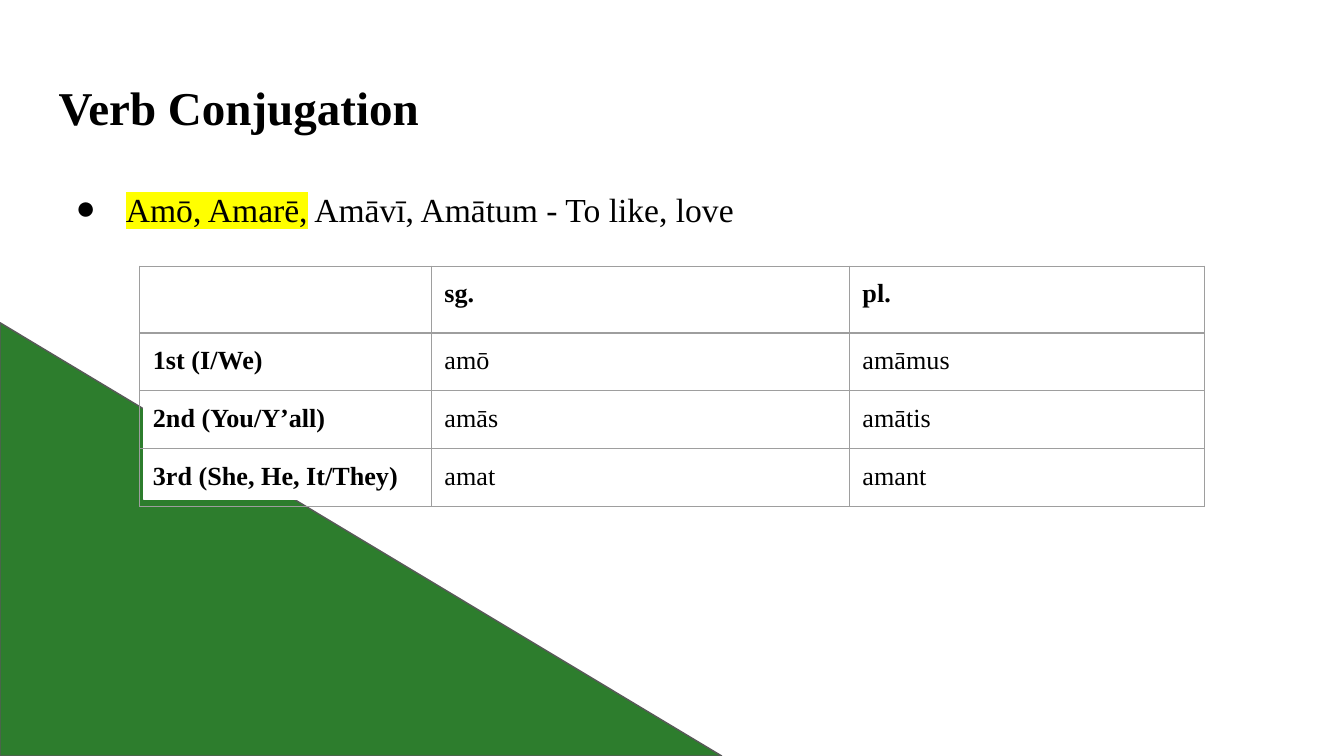
from lxml import etree
from pptx import Presentation
from pptx import util as u
from pptx.dml.color import RGBColor
from pptx.enum import shapes, text
from pptx.oxml.ns import qn

COLORS = {"black": "000000", "white": "FFFFFF", "green": "2D7D2D",
          "outline": "595959", "border": "9E9E9E", "highlight": "FFFF00"}
FONT = "Times New Roman"
INSET = u.Cm(0.25)
TITLE = "Verb Conjugation"
PRINCIPAL_PARTS = [("Amō, Amarē,", True), (" Amāvī, Amātum - To like, love", False)]
CONJUGATION = [
    ("", "sg.", "pl."),
    ("1st (I/We)", "amō", "amāmus"),
    ("2nd (You/Y’all)", "amās", "amātis"),
    ("3rd (She, He, It/They)", "amat", "amant"),
]
COLUMN_WIDTHS = (5.51, 7.9, 6.71)
ROW_HEIGHTS = (1.22, 1.07, 1.07, 1.07)
BACKDROPS = [
    (shapes.MSO_SHAPE.RIGHT_TRIANGLE, (0, 6.1, 13.64, 8.19), "green", "outline"),
    (shapes.MSO_SHAPE.RECTANGLE, (2.72, 5.05, 20.04, 4.39), "white", "white"),
]
TITLE_BOX = (0.86, 1.24, 23.67, 1.6)
BODY_BOX = (0.86, 3.2, 23.67, 9.5)
TABLE_CORNER = (2.64, 5.03)
FRAME = {"margin_left": INSET, "margin_right": INSET, "margin_top": INSET,
         "margin_bottom": INSET, "vertical_anchor": text.MSO_ANCHOR.TOP}


def rgb(name):
    return RGBColor.from_string(COLORS[name])


def lengths(values):
    return [u.Cm(value) for value in values]


def apply(target, values):
    for name, value in values.items():
        setattr(target, name, value)


def add_run(paragraph, wording, size, bold=False):
    run = paragraph.add_run()
    run.text = wording
    apply(run.font, {"name": FONT, "size": u.Pt(size), "bold": bold})
    run.font.color.rgb = rgb("black")
    return run


def add_color(parent, name):
    etree.SubElement(parent, qn("a:srgbClr"), val=COLORS[name])


def add_backdrop(slide, kind, box, fill, line):
    shape = slide.shapes.add_shape(kind, *lengths(box))
    shape.shadow.inherit = False
    shape.fill.solid()
    shape.fill.fore_color.rgb = rgb(fill)
    shape.line.color.rgb = rgb(line)
    shape.line.width = u.Pt(0.75)


def set_title(slide):
    title = slide.shapes.title
    apply(title, dict(zip(("left", "top", "width", "height"), lengths(TITLE_BOX))))
    frame = title.text_frame
    apply(frame, {**FRAME, "word_wrap": True, "auto_size": text.MSO_AUTO_SIZE.NONE})
    paragraph = frame.paragraphs[0]
    paragraph.alignment = text.PP_ALIGN.LEFT
    add_run(paragraph, TITLE, 25.2, True)


def add_principal_parts(slide):
    frame = slide.shapes.add_textbox(*lengths(BODY_BOX)).text_frame
    apply(frame, {**FRAME, "word_wrap": True})
    paragraph = frame.paragraphs[0]
    paragraph.line_spacing = 1.15
    properties = paragraph._p.get_or_add_pPr()
    properties.set("marL", str(u.Cm(1.27)))
    properties.set("indent", str(-u.Cm(0.95)))
    add_color(etree.SubElement(properties, qn("a:buClr")), "black")
    etree.SubElement(properties, qn("a:buFont"), typeface=FONT)
    etree.SubElement(properties, qn("a:buChar"), char="●")
    for wording, highlighted in PRINCIPAL_PARTS:
        run = add_run(paragraph, wording, 18)
        if highlighted:
            highlight = etree.Element(qn("a:highlight"))
            add_color(highlight, "highlight")
            run._r.rPr.find(qn("a:solidFill")).addnext(highlight)


def set_borders(cell):
    properties = cell._tc.get_or_add_tcPr()
    for position, side in enumerate(("lnL", "lnR", "lnT", "lnB")):
        line = etree.Element(qn(f"a:{side}"), w=str(u.Pt(0.75)))
        add_color(etree.SubElement(line, qn("a:solidFill")), "border")
        properties.insert(position, line)


def add_conjugation_table(slide):
    size = (sum(COLUMN_WIDTHS), sum(ROW_HEIGHTS))
    table = slide.shapes.add_table(len(CONJUGATION), len(COLUMN_WIDTHS),
                                   *lengths(TABLE_CORNER + size)).table
    apply(table, {"first_row": False, "horz_banding": False})
    for column, width in zip(table.columns, COLUMN_WIDTHS):
        column.width = u.Cm(width)
    for row, height in zip(table.rows, ROW_HEIGHTS):
        row.height = u.Cm(height)
    for row_index, wordings in enumerate(CONJUGATION):
        for column_index, wording in enumerate(wordings):
            cell = table.cell(row_index, column_index)
            apply(cell, FRAME)
            cell.fill.background()
            set_borders(cell)
            if wording:
                heading = row_index == 0 or column_index == 0
                add_run(cell.text_frame.paragraphs[0], wording, 14, heading)


def main():
    """Build the verb conjugation slide."""
    presentation = Presentation()
    apply(presentation, {"slide_width": u.Cm(25.4), "slide_height": u.Cm(14.29)})
    slide = presentation.slides.add_slide(presentation.slide_layouts[5])
    for backdrop in BACKDROPS:
        add_backdrop(slide, *backdrop)
    set_title(slide)
    add_principal_parts(slide)
    add_conjugation_table(slide)
    presentation.save("out.pptx")


if __name__ == "__main__":
    main()
